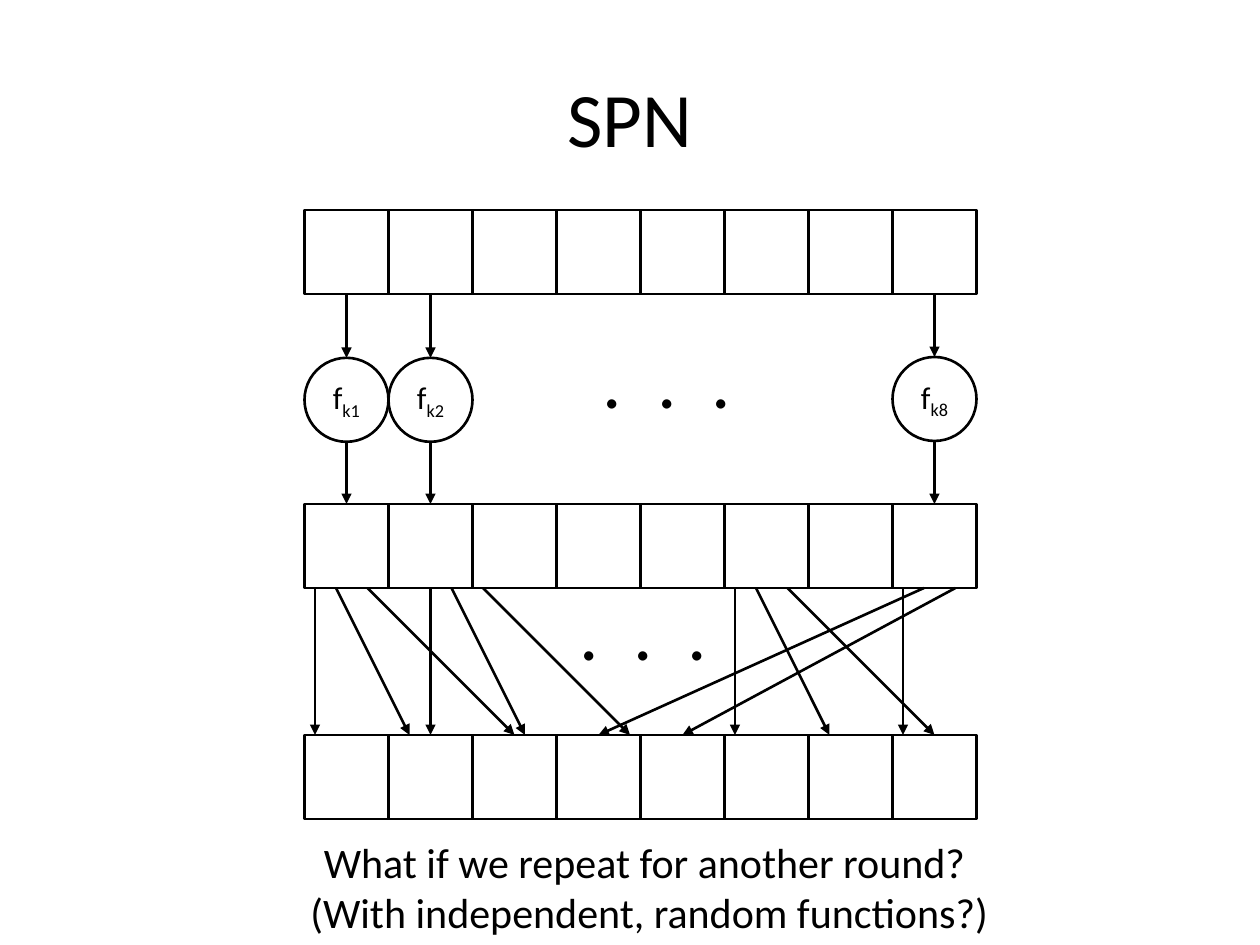
from dataclasses import dataclass

from lxml.etree import SubElement
from pptx import Presentation
from pptx.dml.color import RGBColor
from pptx.enum.shapes import MSO_CONNECTOR, MSO_SHAPE
from pptx.enum.text import MSO_ANCHOR, MSO_AUTO_SIZE, PP_ALIGN
from pptx.oxml.ns import qn
from pptx.util import Pt


@dataclass(frozen=True)
class Theme:
    ink: RGBColor = RGBColor(0, 0, 0)
    paper: RGBColor = RGBColor(255, 255, 255)
    font: str = "Calibri"
    title_size: int = 44
    dots_size: int = 44
    question_size: int = 24
    label_size: int = 18
    line_width: float = 1.5


THEME = Theme()

# Grid, in points
CELL = 48
CELL_COUNT = 8
GRID_LEFT = 174
INPUT_TOP, MIDDLE_TOP, OUTPUT_TOP = 120, 288, 420
DOTS = ".  .  ."

# Key number (also the column) and top of each function circle
FUNCTIONS = [(1, 204.5), (2, 204.5), (8, 204)]

# Start and end x of each permutation wire
WIRES = [
    (180, 180), (192, 234), (210, 294),
    (246, 246), (258, 300), (276, 360),
    (420, 420), (432, 474), (450, 534),
    (516, 516), (528, 342), (546, 390),
]


def format_runs(paragraph, size):
    for run in paragraph.runs:
        run.font.name = THEME.font
        run.font.size = Pt(size)
        run.font.color.rgb = THEME.ink


def add_text(slide, text, left, top, width, height, size,
             align=PP_ALIGN.LEFT, anchor=MSO_ANCHOR.TOP, wrap=False):
    shape = slide.shapes.add_textbox(Pt(left), Pt(top), Pt(width), Pt(height))
    text_frame = shape.text_frame
    text_frame.word_wrap = wrap
    text_frame.auto_size = MSO_AUTO_SIZE.NONE if wrap else MSO_AUTO_SIZE.SHAPE_TO_FIT_TEXT
    text_frame.vertical_anchor = anchor
    text_frame.text = text
    paragraph = text_frame.paragraphs[0]
    paragraph.alignment = align
    format_runs(paragraph, size)


def add_outline(slide, kind, left, top):
    shape = slide.shapes.add_shape(kind, Pt(left), Pt(top), Pt(CELL), Pt(CELL))
    shape.shadow.inherit = False
    shape.fill.background()
    shape.line.color.rgb = THEME.ink
    shape.line.width = Pt(THEME.line_width)
    return shape


def add_block_row(slide, top):
    for column in range(CELL_COUNT):
        add_outline(slide, MSO_SHAPE.RECTANGLE, GRID_LEFT + column * CELL, top)


def add_arrow(slide, start_x, start_y, end_x, end_y):
    connector = slide.shapes.add_connector(
        MSO_CONNECTOR.STRAIGHT, Pt(start_x), Pt(start_y), Pt(end_x), Pt(end_y))
    connector.line.color.rgb = THEME.ink
    connector.line.width = Pt(THEME.line_width)
    SubElement(connector.line._get_or_add_ln(), qn("a:tailEnd"), type="triangle")
    SubElement(connector._element.spPr, qn("a:effectLst"))


def add_function(slide, number, top):
    left = GRID_LEFT + (number - 1) * CELL
    center = left + CELL / 2
    add_arrow(slide, center, INPUT_TOP + CELL, center, top)

    shape = add_outline(slide, MSO_SHAPE.OVAL, left, top)
    text_frame = shape.text_frame
    text_frame.vertical_anchor = MSO_ANCHOR.MIDDLE
    text_frame.text = "f"
    paragraph = text_frame.paragraphs[0]
    paragraph.alignment = PP_ALIGN.CENTER
    subscript = paragraph.add_run()
    subscript.text = f"k{number}"
    format_runs(paragraph, THEME.label_size)
    subscript.font._element.set("baseline", "-25000")

    add_arrow(slide, center, top + CELL, center, MIDDLE_TOP)


def main():
    presentation = Presentation()
    presentation.slide_width = Pt(720)
    presentation.slide_height = Pt(540)
    slide = presentation.slides.add_slide(presentation.slide_layouts[6])
    slide.background.fill.solid()
    slide.background.fill.fore_color.rgb = THEME.paper

    # Title
    add_text(slide, "SPN", 36, 21.6, 648, 90, THEME.title_size,
             PP_ALIGN.CENTER, MSO_ANCHOR.MIDDLE, wrap=True)

    # Input, middle and output blocks
    for top in (INPUT_TOP, MIDDLE_TOP, OUTPUT_TOP):
        add_block_row(slide, top)

    # Keyed functions
    for number, top in FUNCTIONS:
        add_function(slide, number, top)
    add_text(slide, DOTS, 337.5, 186, 88.5, 60.5, THEME.dots_size)

    # Permutation wires
    for start_x, end_x in WIRES:
        add_arrow(slide, start_x, MIDDLE_TOP + CELL, end_x, OUTPUT_TOP)
    add_text(slide, DOTS, 324, 330, 88.5, 60.5, THEME.dots_size)

    # Closing question
    add_text(slide,
             "What if we repeat for another round? \v(With independent, random functions?)",
             168, 474.5, 406, 65.5, THEME.question_size, PP_ALIGN.CENTER)

    presentation.save("out.pptx")


if __name__ == "__main__":
    main()
